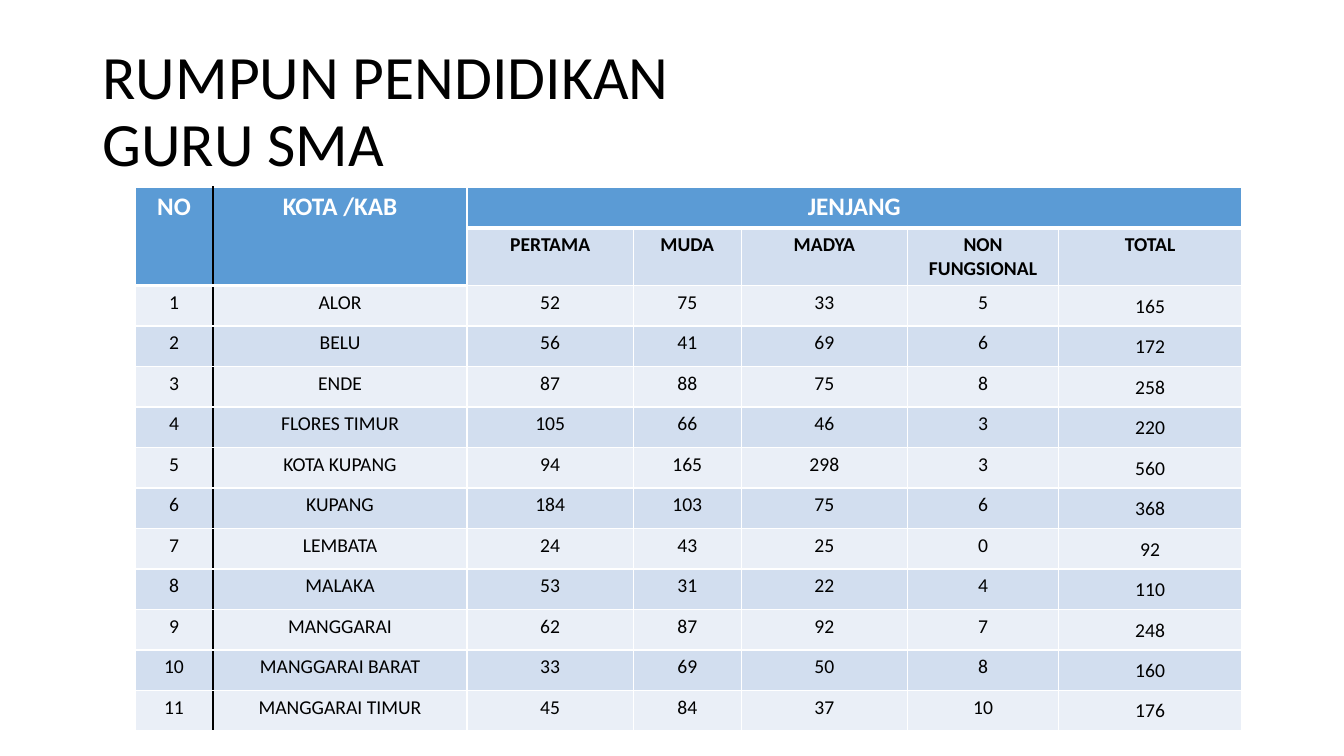
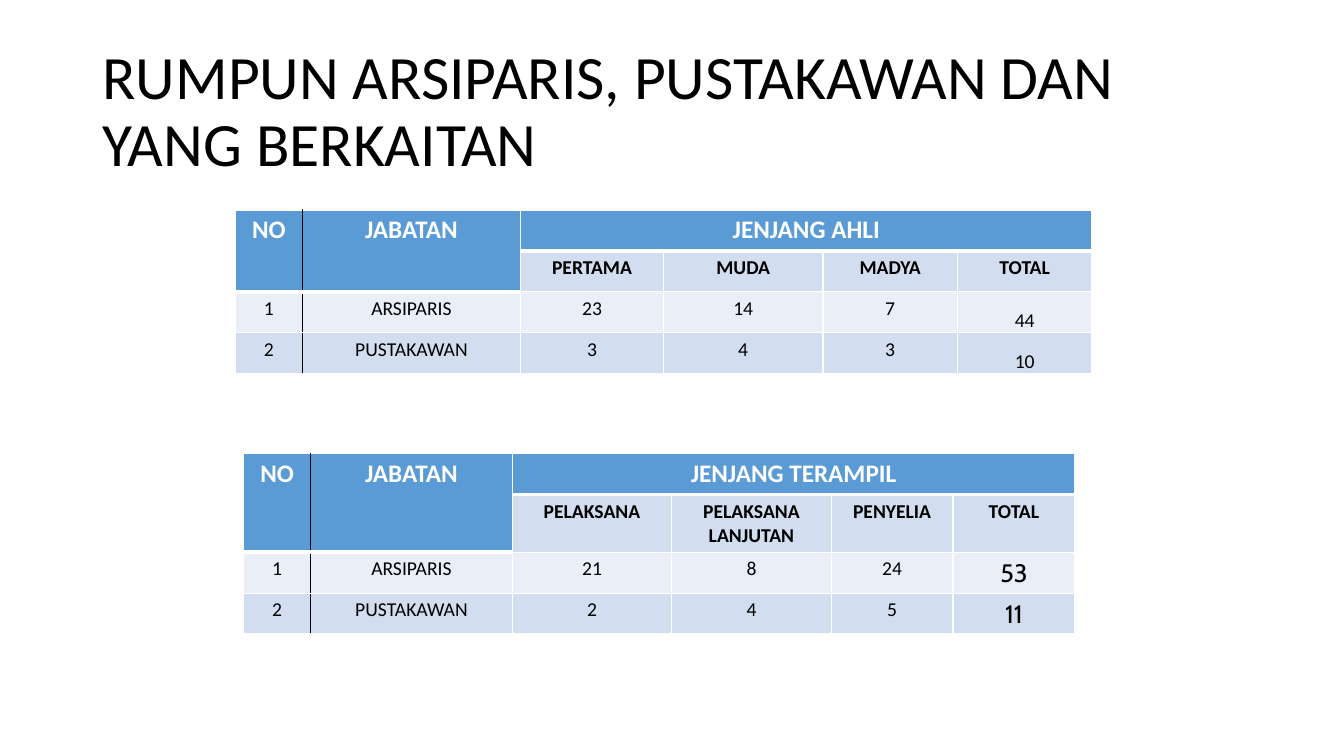
from dataclasses import dataclass

from lxml.etree import SubElement
from pptx import Presentation
from pptx.dml.color import RGBColor
from pptx.enum.text import MSO_ANCHOR, MSO_AUTO_SIZE, PP_ALIGN
from pptx.oxml.ns import qn
from pptx.slide import Slide
from pptx.table import _Cell
from pptx.text.text import _Paragraph
from pptx.util import Cm, Pt

FONT = "Calibri"
BLACK = "000000"
WHITE = "FFFFFF"
HEADER_BLUE = "5B9BD5"
BAND_FILLS = ("EAEFF7", "D2DEEF")
LABEL_COLUMNS = 2
HEADER_ROWS = 2


@dataclass(frozen=True)
class TextStyle:
    size: float
    color: str = BLACK
    bold: bool = False
    font: str = FONT


@dataclass(frozen=True)
class RankTable:
    left: float
    top: float
    column_widths: tuple[float, ...]
    row_height: float
    subheader_height: float
    label: str
    group: str
    ranks: tuple[str, ...]
    records: tuple[tuple[str, tuple[int, ...]], ...]
    total_style: TextStyle = TextStyle(14)
    total_anchor: MSO_ANCHOR = MSO_ANCHOR.MIDDLE


@dataclass(frozen=True)
class RankSlide:
    title_lines: tuple[str, ...]
    tables: tuple[RankTable, ...]


TITLE_STYLE = TextStyle(44)
HEADER_STYLE = TextStyle(18, WHITE, True)
SUBHEADER_STYLE = TextStyle(14, bold=True)
BODY_STYLE = TextStyle(14)

TEACHERS = RankTable(
    3.4, 4.71, (1.97, 6.4, 4.19, 2.72, 4.19, 3.81, 4.61), 1.02, 1.45,
    "KOTA /KAB", "JENJANG", ("PERTAMA", "MUDA", "MADYA", "NON FUNGSIONAL"),
    (
        ("ALOR", (52, 75, 33, 5)),
        ("BELU", (56, 41, 69, 6)),
        ("ENDE", (87, 88, 75, 8)),
        ("FLORES TIMUR", (105, 66, 46, 3)),
        ("KOTA KUPANG", (94, 165, 298, 3)),
        ("KUPANG", (184, 103, 75, 6)),
        ("LEMBATA", (24, 43, 25, 0)),
        ("MALAKA", (53, 31, 22, 4)),
        ("MANGGARAI", (62, 87, 92, 7)),
        ("MANGGARAI BARAT", (33, 69, 50, 8)),
        ("MANGGARAI TIMUR", (45, 84, 37, 10)),
    ),
)
EXPERTS = RankTable(
    5.93, 5.29, (1.69, 5.5, 3.6, 4.02, 3.39, 3.39), 1.03, 1.03,
    "JABATAN", "JENJANG AHLI", ("PERTAMA", "MUDA", "MADYA"),
    (("ARSIPARIS", (23, 14, 7)), ("PUSTAKAWAN", (3, 4, 3))),
    total_anchor=MSO_ANCHOR.BOTTOM,
)
SKILLED = RankTable(
    6.14, 11.43, (1.69, 5.08, 4.02, 4.02, 3.07, 3.07), 1.03, 1.45,
    "JABATAN", "JENJANG TERAMPIL", ("PELAKSANA", "PELAKSANA LANJUTAN", "PENYELIA"),
    (("ARSIPARIS", (21, 8, 24)), ("PUSTAKAWAN", (2, 4, 5))),
    total_style=TextStyle(18, font="Cabin"),
)
SLIDES = (
    RankSlide(("RUMPUN PENDIDIKAN", "GURU SMA"), (TEACHERS,)),
    RankSlide(("RUMPUN ARSIPARIS, PUSTAKAWAN DAN YANG BERKAITAN",), (EXPERTS, SKILLED)),
)


def rgb(color: str) -> RGBColor:
    """Turn a hex string into a colour."""
    return RGBColor.from_string(color)


def add_run(paragraph: _Paragraph, text: str, style: TextStyle) -> None:
    """Append one formatted run."""
    run = paragraph.add_run()
    run.text = text
    run.font.name = style.font
    run.font.size = Pt(style.size)
    run.font.bold = style.bold
    run.font.color.rgb = rgb(style.color)


def add_title(slide: Slide, lines: tuple[str, ...]) -> None:
    """Place and fill the title placeholder."""
    title = slide.shapes.title
    title.left, title.top, title.width, title.height = Cm(2.33), Cm(1.01), Cm(29.21), Cm(3.68)
    frame = title.text_frame
    frame.word_wrap = True
    frame.auto_size = MSO_AUTO_SIZE.NONE
    frame.vertical_anchor = MSO_ANCHOR.MIDDLE
    paragraph = frame.paragraphs[0]
    paragraph.alignment = PP_ALIGN.LEFT
    paragraph.line_spacing = 0.9
    for index, line in enumerate(lines):
        if index:
            paragraph.add_line_break()
        add_run(paragraph, line, TITLE_STYLE)


def is_header(row: int, column: int) -> bool:
    """Tell whether a cell belongs to the blue header."""
    return row == 0 or (row < HEADER_ROWS and column < LABEL_COLUMNS)


def add_border(cell: _Cell, side: str, color: str, width: float) -> None:
    """Draw one solid border of a cell."""
    properties = cell._tc.get_or_add_tcPr()
    line = SubElement(properties, qn(f"a:ln{side}"), w=str(Pt(width)))
    fill = SubElement(line, qn("a:solidFill"))
    SubElement(fill, qn("a:srgbClr"), val=color)


def format_cell(cell: _Cell, row: int, column: int) -> None:
    """Set the borders and fill that follow from a cell's position."""
    header = is_header(row, column)
    divided = header or row >= HEADER_ROWS
    below_header = row > 0 and is_header(row - 1, column)
    add_border(cell, "L", BLACK if divided and column == 1 else WHITE, 1)
    add_border(cell, "R", BLACK if divided and column == 0 else WHITE, 1)
    add_border(cell, "T", WHITE, 3 if below_header else 1)
    add_border(cell, "B", WHITE, 3 if header else 1)
    cell.fill.solid()
    cell.fill.fore_color.rgb = rgb(HEADER_BLUE if header else BAND_FILLS[row % 2])


def write_cell(cell: _Cell, text: str, style: TextStyle) -> None:
    """Write centred text in a cell."""
    paragraph = cell.text_frame.paragraphs[0]
    paragraph.alignment = PP_ALIGN.CENTER
    add_run(paragraph, text, style)


def add_rank_table(slide: Slide, data: RankTable) -> None:
    """Build a table of counts by rank with row totals."""
    rows = [
        ("NO", data.label, data.group),
        ("", "", *data.ranks, "TOTAL"),
        *((str(number), name, *map(str, counts), str(sum(counts)))
          for number, (name, counts) in enumerate(data.records, 1)),
    ]
    heights = [data.row_height] * len(rows)
    heights[1] = data.subheader_height
    last_column = len(data.column_widths) - 1
    table = slide.shapes.add_table(
        len(rows), len(data.column_widths), Cm(data.left), Cm(data.top),
        Cm(sum(data.column_widths)), Cm(sum(heights)),
    ).table
    table.first_row = table.horz_banding = False
    for column, width in zip(table.columns, data.column_widths):
        column.width = Cm(width)
    for row, (values, height) in enumerate(zip(rows, heights)):
        table.rows[row].height = Cm(height)
        for column in range(last_column + 1):
            cell = table.cell(row, column)
            format_cell(cell, row, column)
            style = (HEADER_STYLE, SUBHEADER_STYLE)[row] if row < HEADER_ROWS else BODY_STYLE
            if row >= HEADER_ROWS and column == last_column:
                style = data.total_style
                cell.vertical_anchor = data.total_anchor
                cell.margin_left = cell.margin_right = cell.margin_top = Cm(0.03)
                cell.margin_bottom = Cm(0)
            if column < len(values) and values[column]:
                write_cell(cell, values[column], style)
    for column in range(LABEL_COLUMNS):
        table.cell(0, column).merge(table.cell(1, column))
    table.cell(0, LABEL_COLUMNS).merge(table.cell(0, last_column))


def main() -> None:
    """Build and save the presentation."""
    presentation = Presentation()
    presentation.slide_width, presentation.slide_height = Cm(33.87), Cm(19.05)
    for content in SLIDES:
        slide = presentation.slides.add_slide(presentation.slide_layouts[5])
        add_title(slide, content.title_lines)
        for data in content.tables:
            add_rank_table(slide, data)
    presentation.save("out.pptx")


if __name__ == "__main__":
    main()
